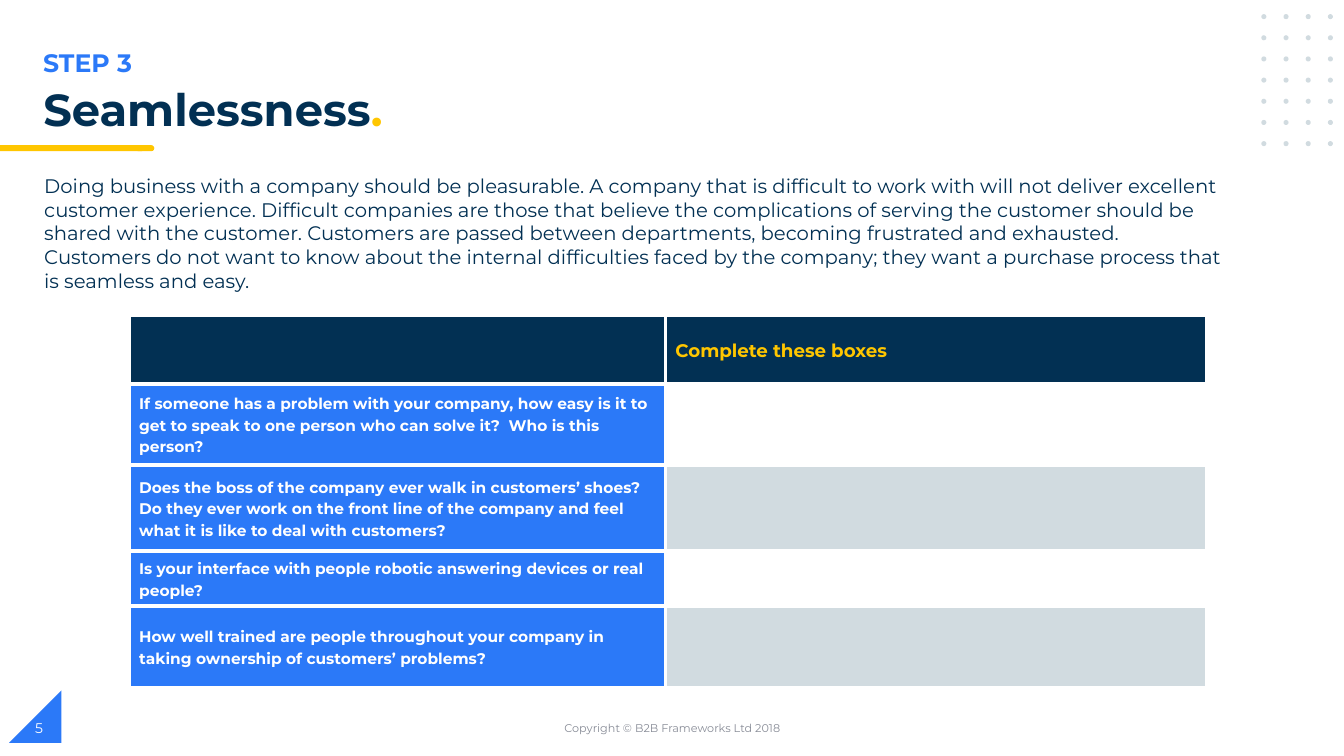
import pptx
import pptx.util
import pptx.dml.color
import pptx.enum.shapes
import pptx.enum.text
import pptx.oxml.ns
import lxml.etree

Inches = pptx.util.Inches
Pt = pptx.util.Pt
RGBColor = pptx.dml.color.RGBColor
SHAPES = pptx.enum.shapes.MSO_SHAPE
ALIGN = pptx.enum.text.PP_ALIGN
ANCHOR = pptx.enum.text.MSO_ANCHOR

NAVY = RGBColor(0x02, 0x30, 0x53)
BLUE = RGBColor(0x2B, 0x79, 0xF8)
YELLOW = RGBColor(0xFF, 0xC6, 0x00)
PALE = RGBColor(0xD1, 0xDB, 0xE0)
GREY = RGBColor(0x88, 0x8C, 0x97)
WHITE = RGBColor(0xFF, 0xFF, 0xFF)
FONT = "Montserrat"

STEP = "STEP 3"
TITLE = [("Seamlessness", NAVY), (".", YELLOW)]
INTRO = (
    "Doing business with a company should be pleasurable. A company that is difficult to work with "
    "will not deliver excellent customer experience. Difficult companies are those that believe the "
    "complications of serving the customer should be shared with the customer. Customers are passed "
    "between departments, becoming frustrated and exhausted. Customers do not want to know about the "
    "internal difficulties faced by the company; they want a purchase process that is seamless and easy."
)
HEADER = "Complete these boxes"
QUESTIONS = [
    "If someone has a problem with your company, how easy is it to get to speak to one person "
    "who can solve it?  Who is this person?",
    "Does the boss of the company ever walk in customers’ shoes?  Do they ever work on the front "
    "line of the company and feel what it is like to deal with customers?",
    "Is your interface with people robotic answering devices or real people?",
    "How well trained are people throughout your company in taking ownership of customers’ problems?",
]
COPYRIGHT = "Copyright © B2B Frameworks Ltd 2018"
PAGE_NUMBER = "5"

COLUMN_WIDTHS = [5.32, 5.37]
ROW_HEIGHTS = [0.68, 0.8, 0.86, 0.54, 0.81]
DOT_COLUMNS, DOT_ROWS = 4, 7
DOT_LEFT, DOT_TOP, DOT_SIZE = 12.51, 0.14, 0.05
DOT_STEP_X, DOT_STEP_Y = 0.22, 0.21


def format_run(run, size, color, bold=False):
    run.font.name = FONT
    run.font.size = Pt(size)
    run.font.bold = bold
    run.font.color.rgb = color


def add_filled_shape(slide, kind, box, color):
    shape = slide.shapes.add_shape(kind, *map(Inches, box))
    shape.shadow.inherit = False
    shape.fill.solid()
    shape.fill.fore_color.rgb = color
    shape.line.fill.background()
    return shape


def add_text(slide, text, box, size, color, bold=False, anchor=ANCHOR.TOP, align=ALIGN.LEFT):
    frame = slide.shapes.add_textbox(*map(Inches, box)).text_frame
    frame.word_wrap = True
    frame.vertical_anchor = anchor
    frame.text = text
    paragraph = frame.paragraphs[0]
    paragraph.alignment = align
    format_run(paragraph.runs[0], size, color, bold)


def set_borders(cell, color, width):
    properties = cell._tc.get_or_add_tcPr()
    qn = pptx.oxml.ns.qn
    for side in ("a:lnL", "a:lnR", "a:lnT", "a:lnB"):
        line = lxml.etree.SubElement(properties, qn(side), w=str(Pt(width)))
        fill = lxml.etree.SubElement(line, qn("a:solidFill"))
        lxml.etree.SubElement(fill, qn("a:srgbClr"), val=str(color))


def format_cell(cell, fill, text="", size=11, color=WHITE):
    set_borders(cell, WHITE, 3)
    cell.fill.solid()
    cell.fill.fore_color.rgb = fill
    cell.vertical_anchor = ANCHOR.MIDDLE
    cell.margin_top = cell.margin_bottom = 0
    if text:
        cell.text = text
        paragraph = cell.text_frame.paragraphs[0]
        paragraph.line_spacing = 1.15
        format_run(paragraph.runs[0], size, color, True)


def add_decoration(slide):
    corner = add_filled_shape(slide, SHAPES.RIGHT_TRIANGLE, (0.09, 6.85, 0.52, 0.52), BLUE)
    corner._element.spPr.xfrm.set("flipH", "1")
    add_filled_shape(slide, SHAPES.FLOWCHART_TERMINATOR, (1.34, 1.44, 0.19, 0.06), YELLOW)
    add_filled_shape(slide, SHAPES.RECTANGLE, (0, 1.44, 1.41, 0.06), YELLOW)
    for row in range(DOT_ROWS):
        for column in range(DOT_COLUMNS):
            left = DOT_LEFT + column * DOT_STEP_X
            top = DOT_TOP + row * DOT_STEP_Y
            add_filled_shape(slide, SHAPES.OVAL, (left, top, DOT_SIZE, DOT_SIZE), PALE)


def add_title(slide):
    title = slide.shapes.title
    title.left, title.top, title.width, title.height = map(Inches, (0.33, 0.82, 11.59, 0.56))
    frame = title.text_frame
    frame.word_wrap = True
    frame.auto_size = pptx.enum.text.MSO_AUTO_SIZE.NONE
    frame.vertical_anchor = ANCHOR.TOP
    paragraph = frame.paragraphs[0]
    paragraph.alignment = ALIGN.LEFT
    paragraph.line_spacing = 0.9
    for text, color in TITLE:
        run = paragraph.add_run()
        run.text = text
        format_run(run, 32, color, True)


def add_question_table(slide):
    box = (1.28, 3.13, sum(COLUMN_WIDTHS), sum(ROW_HEIGHTS))
    table = slide.shapes.add_table(len(ROW_HEIGHTS), len(COLUMN_WIDTHS), *map(Inches, box)).table
    for column, width in zip(table.columns, COLUMN_WIDTHS):
        column.width = Inches(width)
    for row, height in zip(table.rows, ROW_HEIGHTS):
        row.height = Inches(height)
    format_cell(table.cell(0, 0), NAVY)
    format_cell(table.cell(0, 1), NAVY, HEADER, 13, YELLOW)
    for index, question in enumerate(QUESTIONS, start=1):
        format_cell(table.cell(index, 0), BLUE, question)
        format_cell(table.cell(index, 1), WHITE if index % 2 else PALE)


def main():
    presentation = pptx.Presentation()
    presentation.slide_width = Inches(13.33)
    presentation.slide_height = Inches(7.5)
    slide = presentation.slides.add_slide(presentation.slide_layouts[5])
    add_decoration(slide)
    add_text(slide, STEP, (0.33, 0.42, 6.69, 0.4), 18, BLUE, bold=True)
    add_title(slide)
    add_text(slide, INTRO, (0.34, 1.68, 11.95, 1.28), 14, NAVY)
    add_question_table(slide)
    add_text(slide, COPYRIGHT, (4.42, 7.02, 4.5, 0.4), 8, GREY, anchor=ANCHOR.MIDDLE, align=ALIGN.CENTER)
    add_text(slide, PAGE_NUMBER, (0.25, 7.02, 3, 0.4), 10, WHITE, anchor=ANCHOR.MIDDLE)
    presentation.save("out.pptx")


if __name__ == "__main__":
    main()
